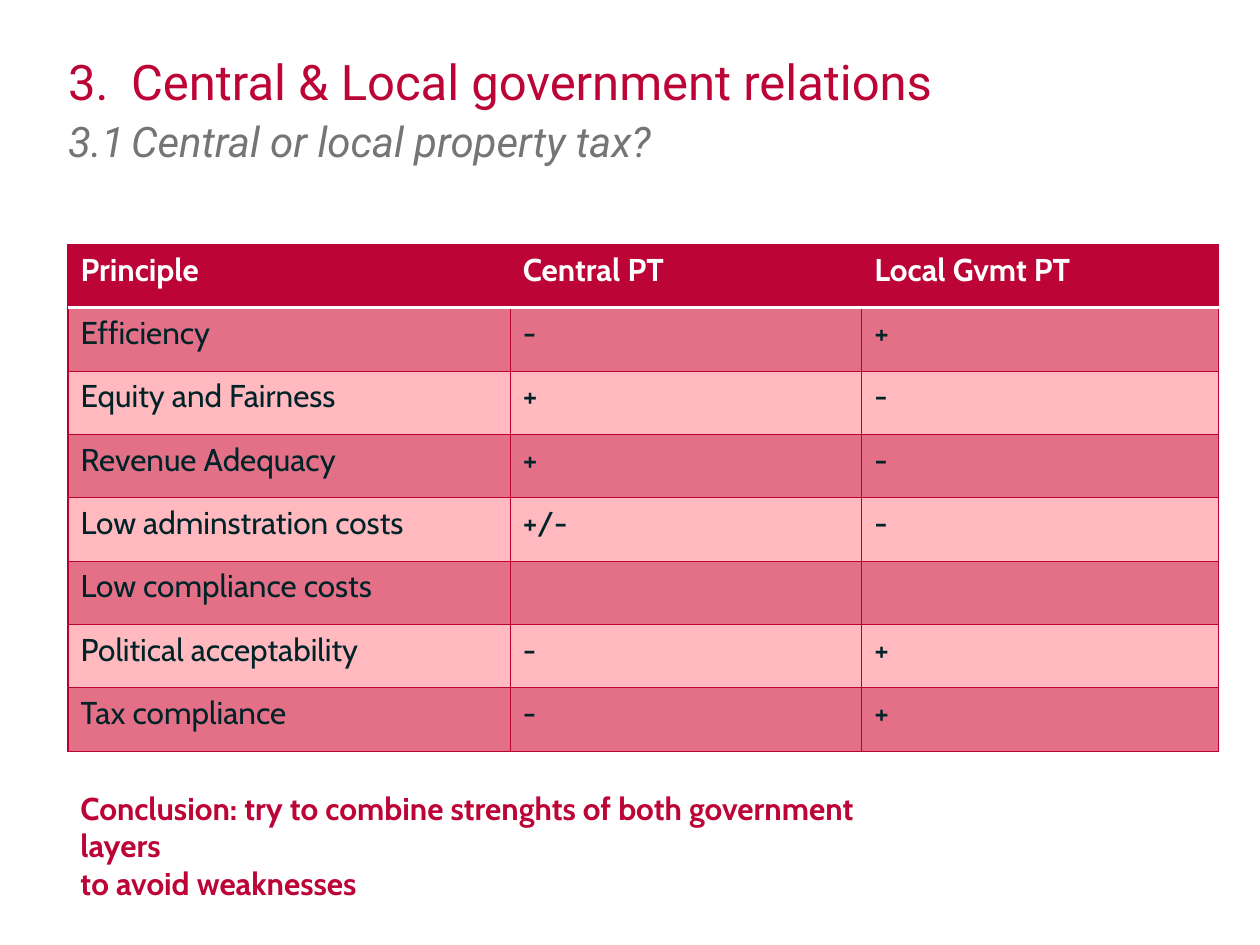
from lxml import etree
from pptx import Presentation
from pptx.dml.color import RGBColor
from pptx.enum import text
from pptx.oxml import ns
from pptx.util import Pt

COLORS = {
    "crimson": "BC0436", "grid": "BC0033", "grey": "757575", "ink": "002328",
    "white": "FFFFFF", "band_dark": "E47088", "band_light": "FFB9BF",
}
MARGIN = 38.9


def style(font, color, **values):
    font.color.rgb = RGBColor.from_string(COLORS[color])
    for name, value in values.items():
        setattr(font, name, value)


def add_border(cell, side, color, width):
    line = etree.SubElement(cell._tc.get_or_add_tcPr(), ns.qn(f"a:ln{side}"), w=str(Pt(width)))
    fill = etree.SubElement(line, ns.qn("a:solidFill"))
    etree.SubElement(fill, ns.qn("a:srgbClr"), val=COLORS[color])


prs = Presentation()
prs.slide_width, prs.slide_height = Pt(720), Pt(540)
slide = prs.slides.add_slide(prs.slide_layouts[5])

# Title and subtitle, aligned on one tab stop
title = slide.shapes.title
title.left, title.top, title.width, title.height = Pt(MARGIN), Pt(31), Pt(643.7), Pt(65.5)
title_format = {
    "margin_left": 0, "margin_top": 0, "margin_right": 0, "margin_bottom": 0,
    "word_wrap": True, "auto_size": text.MSO_AUTO_SIZE.NONE,
    "vertical_anchor": text.MSO_ANCHOR.TOP,
}
for name, value in title_format.items():
    setattr(title.text_frame, name, value)
heading = title.text_frame.paragraphs[0]
tabs = etree.SubElement(heading._p.get_or_add_pPr(), ns.qn("a:tabLst"))
etree.SubElement(tabs, ns.qn("a:tab"), pos=str(Pt(36)), algn="l")
heading.alignment = text.PP_ALIGN.LEFT
heading.line_spacing = Pt(32)
section = heading.add_run()
section.text = "3.\tCentral & Local government relations"
style(section.font, "crimson", name="Roboto", size=Pt(28))
heading.add_line_break()
subsection = heading.add_run()
subsection.text = "3.1\tCentral or local property tax?"
style(subsection.font, "grey", name="Roboto", size=Pt(24), italic=True)

# Comparison of central and local property tax
principles = [
    ("Principle", "Central PT", "Local Gvmt PT"),
    ("Efficiency", "-", "+"),
    ("Equity and Fairness", "+", "-"),
    ("Revenue Adequacy", "+", "-"),
    ("Low adminstration costs", "+/-", "-"),
    ("Low compliance costs", "", ""),
    ("Political acceptability", "-", "+"),
    ("Tax compliance", "-", "+"),
]
column_widths = [252.7, 200.9, 203.8]
row_height = 36.2
comparison = slide.shapes.add_table(
    len(principles), len(column_widths), Pt(MARGIN), Pt(139.7),
    Pt(sum(column_widths)), Pt(row_height * len(principles))).table
for column, width in zip(comparison.columns, column_widths):
    column.width = Pt(width)
for r, values in enumerate(principles):
    comparison.rows[r].height = Pt(row_height)
    header = r == 0
    band = "crimson" if header else "band_dark" if r % 2 else "band_light"
    for c, value in enumerate(values):
        cell = comparison.cell(r, c)
        for side in "LRTB":
            if (r, side) in ((0, "B"), (1, "T")):
                add_border(cell, side, "white", 2)
            else:
                add_border(cell, side, "grid", 0.75)
        cell.fill.solid()
        cell.fill.fore_color.rgb = RGBColor.from_string(COLORS[band])
        cell.text = value
        style(cell.text_frame.paragraphs[0].font, "white" if header else "ink",
              name="Cabin", size=Pt(18), bold=header)

# Conclusion
conclusion = slide.shapes.add_textbox(Pt(MARGIN), Pt(447.1), Pt(497.5), Pt(51.1)).text_frame
conclusion.word_wrap = True
remark = conclusion.paragraphs[0]
remark.text = "Conclusion: try to combine strenghts of both government layers\vto avoid weaknesses"
style(remark.font, "crimson", name="Cabin", size=Pt(18), bold=True)

prs.save("out.pptx")
